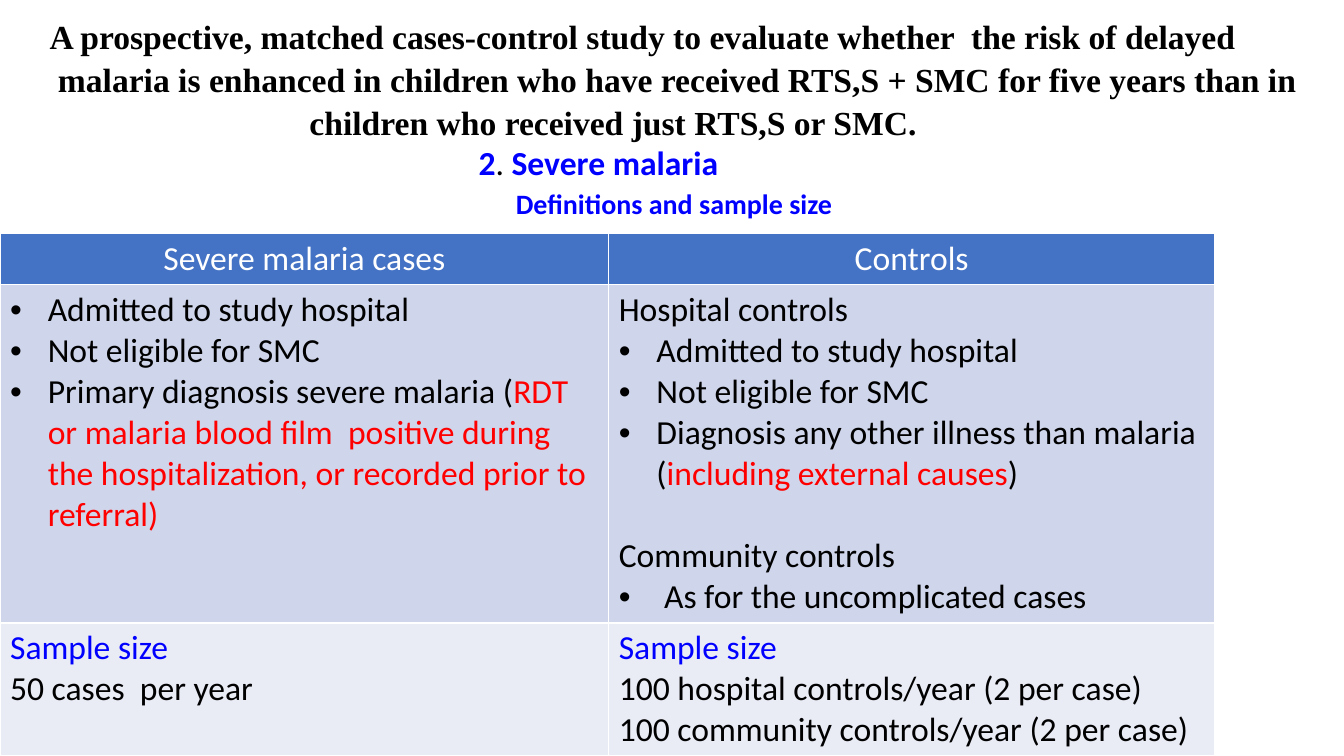
"""Build a slide defining severe malaria cases, controls and sample sizes."""
from pptx import Presentation
from pptx.dml.color import RGBColor as Rgb
from pptx.enum.text import PP_ALIGN as Align
from pptx.oxml.xmlchemy import OxmlElement as Element
from pptx.util import Cm, Pt

COLORS = {"black": "000000", "white": "FFFFFF", "blue": "0000FF", "red": "FF0000",
          "header": "4472C4", "criteria": "CFD5EA", "sample": "E9EBF5"}

TITLE = [
    (1, "A prospective, matched cases-control study to evaluate whether  the risk of delayed"),
    (1.21, "malaria is enhanced in children who have received RTS,S + SMC for five years than in"),
    (7.55, "children who received just RTS,S or SMC."),
]
SECTION = [("2", "blue", True), (". ", "black", False), ("Severe malaria", "blue", True)]
SUBTITLE = "Definitions and sample size"

COLUMN_WIDTHS = [15.34, 15.27]
HEADERS = ["Severe malaria cases", "Controls"]
CASE_CRITERIA = [
    ("bullet", [("Admitted to study hospital", "black")]),
    ("bullet", [("Not eligible for SMC", "black")]),
    ("bullet", [("Primary diagnosis severe malaria (", "black"),
                ("RDT or malaria blood film  positive during the hospitalization, "
                 "or recorded prior to referral)", "red")]),
]
CONTROL_CRITERIA = [
    ("plain", [("Hospital controls", "black")]),
    ("bullet", [("Admitted to study hospital", "black")]),
    ("bullet", [("Not eligible for SMC", "black")]),
    ("bullet", [("Diagnosis any other illness than malaria (", "black"),
                ("including external causes", "red"), (")", "black")]),
    ("spaced", [("Community controls", "black")]),
    ("bullet", [(" As for the uncomplicated cases", "black")]),
]
CASE_SAMPLE = [
    ("plain", [("Sample size", "blue")]),
    ("plain", [("50 cases  per year", "black")]),
]
CONTROL_SAMPLE = [
    ("plain", [("Sample size", "blue")]),
    ("plain", [("100 hospital controls/year (2 per case)", "black")]),
    ("plain", [("100 community controls/year (2 per case)", "black")]),
]
ROWS = [
    (1.27, "header", [[("header", [(text, "white")])] for text in HEADERS]),
    (8.37, "criteria", [CASE_CRITERIA, CONTROL_CRITERIA]),
    (3.3, "sample", [CASE_SAMPLE, CONTROL_SAMPLE]),
]


def color(name):
    return Rgb.from_string(COLORS[name])


def set_font(font, name="Calibri", size=24, bold=False):
    font.name, font.size, font.bold = name, Pt(size), bold


def indent(paragraph, left, first=0):
    properties = paragraph._p.get_or_add_pPr()
    properties.set("marL", str(Cm(left)))
    properties.set("indent", str(Cm(first)))
    return properties


def add_bullet(paragraph):
    properties = indent(paragraph, 0.95, -0.95)
    font, bullet = Element("a:buFont"), Element("a:buChar")
    font.set("typeface", "Arial")
    bullet.set("char", "•")
    properties.extend([font, bullet])


def add_run(paragraph, text, color_name):
    run = paragraph.add_run()
    run.text = text
    run.font.color.rgb = color(color_name)
    return run


def add_paragraphs(frame, count):
    return [frame.paragraphs[0]] + [frame.add_paragraph() for _ in range(count - 1)]


def add_text_box(slide, left, top, width, height):
    frame = slide.shapes.add_textbox(Cm(left), Cm(top), Cm(width), Cm(height)).text_frame
    frame.word_wrap = True
    return frame


def add_title(slide):
    frame = add_text_box(slide, 0, 0.2, 33.86, 3.6)
    for paragraph, (left, text) in zip(add_paragraphs(frame, len(TITLE)), TITLE):
        indent(paragraph, left)
        paragraph.line_spacing = 1.07
        set_font(paragraph.font, "Times New Roman", bold=True)
        add_run(paragraph, text, "black")


def add_section(slide):
    frame = add_text_box(slide, 11.25, 3.45, 10.6, 2.3)
    section, subtitle = add_paragraphs(frame, 2)
    indent(section, 0.56)
    set_font(section.font)
    for text, color_name, bold in SECTION:
        add_run(section, text, color_name).font.bold = bold
    indent(subtitle, 1.5)
    subtitle.space_before = Pt(3)
    set_font(subtitle.font, size=20, bold=True)
    add_run(subtitle, SUBTITLE, "blue")


def fill_cell(cell, fill_name, lines):
    cell.fill.solid()
    cell.fill.fore_color.rgb = color(fill_name)
    for paragraph, (kind, runs) in zip(add_paragraphs(cell.text_frame, len(lines)), lines):
        set_font(paragraph.font)
        if kind == "header":
            paragraph.alignment = Align.CENTER
        elif kind == "bullet":
            add_bullet(paragraph)
        elif kind == "spaced":
            paragraph.space_before = Pt(29.3)
        for text, color_name in runs:
            add_run(paragraph, text, color_name)


def add_definitions(slide):
    height = sum(row[0] for row in ROWS)
    table = slide.shapes.add_table(len(ROWS), len(COLUMN_WIDTHS), Cm(0), Cm(5.89),
                                   Cm(sum(COLUMN_WIDTHS)), Cm(height)).table
    for column, width in zip(table.columns, COLUMN_WIDTHS):
        column.width = Cm(width)
    for row, (row_height, fill_name, cells) in zip(table.rows, ROWS):
        row.height = Cm(row_height)
        for cell, lines in zip(row.cells, cells):
            fill_cell(cell, fill_name, lines)


def main():
    presentation = Presentation()
    presentation.slide_width, presentation.slide_height = Cm(33.87), Cm(19.05)
    slide = presentation.slides.add_slide(presentation.slide_layouts[6])
    add_definitions(slide)
    add_title(slide)
    add_section(slide)
    presentation.save("out.pptx")


if __name__ == "__main__":
    main()
